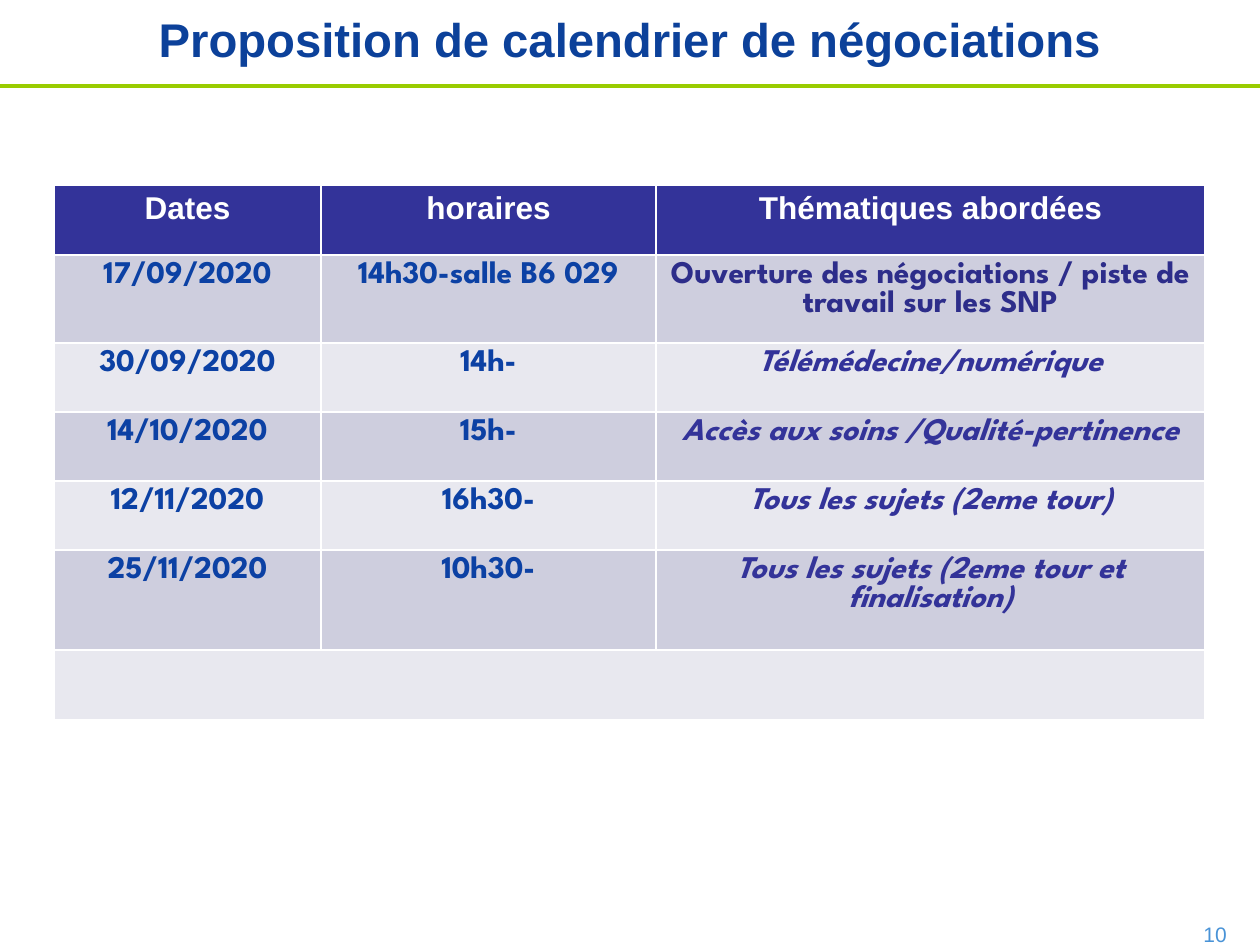
from lxml.etree import SubElement
from pptx import Presentation
from pptx.dml.color import RGBColor
from pptx.enum.shapes import MSO_CONNECTOR
from pptx.enum.text import MSO_ANCHOR, MSO_AUTO_SIZE, PP_ALIGN
from pptx.oxml.ns import qn
from pptx.util import Pt

SCALE = 914400 / 126
COLORS = {
    "title": "0C419A", "rule": "99CC00", "page": "4993D7",
    "head": "333399", "white": "FFFFFF", "odd": "CECEDE", "even": "E8E8EF",
    "date": "0C41A4", "opening": "2D2D8A", "topic": "333399",
}
HEAD = ["Dates", "horaires", "Thématiques abordées"]
MEETINGS = [
    ["17/09/2020", "14h30-salle B6 029",
     "Ouverture des négociations / piste de travail sur les SNP"],
    ["30/09/2020", "14h-", "Télémédecine/numérique"],
    ["14/10/2020", "15h-", "Accès aux soins /Qualité-pertinence"],
    ["12/11/2020", "16h30-", "Tous les sujets (2eme tour)"],
    ["25/11/2020", "10h30-", "Tous les sujets (2eme tour et finalisation)"],
]
WIDTHS = [267, 335, 549]
HEIGHTS = [70, 70, 69, 69, 69, 100, 70]


def px(n):
    return round(n * SCALE)


def color(name):
    return RGBColor.from_string(COLORS[name])


class Deck:
    """Holds the shared text style and the current slide."""
    face = "Arial"
    accent = "League Spartan"

    def __init__(self, wide, high):
        self.prs = Presentation()
        self.prs.slide_width, self.prs.slide_height = px(wide), px(high)
        self.slide = self.prs.slides.add_slide(self.prs.slide_layouts[5])

    def style(self, para, size, tint, face=None, bold=True, slant=False,
              align=PP_ALIGN.CENTER):
        para.alignment = align
        font = para.font
        font.name, font.size = face or self.face, Pt(size)
        font.bold, font.italic = bold, slant
        font.color.rgb = color(tint)

    def title(self, text, x, y, w, h):
        shape = self.slide.shapes.title
        shape.left, shape.top, shape.width, shape.height = map(px, (x, y, w, h))
        frame = shape.text_frame
        frame.text = text
        frame.auto_size = MSO_AUTO_SIZE.NONE
        frame.vertical_anchor = MSO_ANCHOR.MIDDLE
        self.style(frame.paragraphs[0], 27, "title")

    def rule(self, x, y, end):
        line = self.slide.shapes.add_connector(
            MSO_CONNECTOR.STRAIGHT, px(x), px(y), px(end), px(y))
        line.line.color.rgb = color("rule")
        line.line.width = Pt(2.25)
        SubElement(line._element.spPr, qn("a:effectLst"))

    def label(self, text, x, y, w, h):
        frame = self.slide.shapes.add_textbox(*map(px, (x, y, w, h))).text_frame
        frame.word_wrap = True
        frame.text = text
        self.style(frame.paragraphs[0], 12, "page", bold=False,
                   align=PP_ALIGN.LEFT)

    def cell(self, cell, fill, text="", tint="date", face=None, slant=False):
        cell.fill.solid()
        cell.fill.fore_color.rgb = color(fill)
        cell.text = text
        self.style(cell.text_frame.paragraphs[0], 18, tint, face, slant=slant)

    def table(self, x, y):
        """Draw the calendar, with a merged empty row at its foot."""
        grid = self.slide.shapes.add_table(
            len(HEIGHTS), len(WIDTHS), px(x), px(y),
            px(sum(WIDTHS)), px(sum(HEIGHTS))).table
        for col, width in zip(grid.columns, WIDTHS):
            col.width = px(width)
        for row, height in zip(grid.rows, HEIGHTS):
            row.height = px(height)
        for c, text in enumerate(HEAD):
            self.cell(grid.cell(0, c), "head", text, "white")
        for r, meeting in enumerate(MEETINGS, 1):
            for c, text in enumerate(meeting):
                topic = c == 2
                tint = "date"
                if topic:
                    tint = "opening" if r == 1 else "topic"
                self.cell(grid.cell(r, c), "odd" if r % 2 else "even", text,
                          tint, self.accent, slant=topic and r > 1)
        last = len(HEIGHTS) - 1
        grid.cell(last, 0).merge(grid.cell(last, len(WIDTHS) - 1))
        for c in range(len(WIDTHS)):
            self.cell(grid.cell(last, c), "even")


def main():
    deck = Deck(1260, 945)
    deck.rule(0, 86, 1260)
    deck.title("Proposition de calendrier de négociations", 0, 0, 1260, 77)
    deck.label("10", 1191, 915, 69, 30)
    deck.table(54, 185)
    deck.prs.save("out.pptx")


if __name__ == "__main__":
    main()
